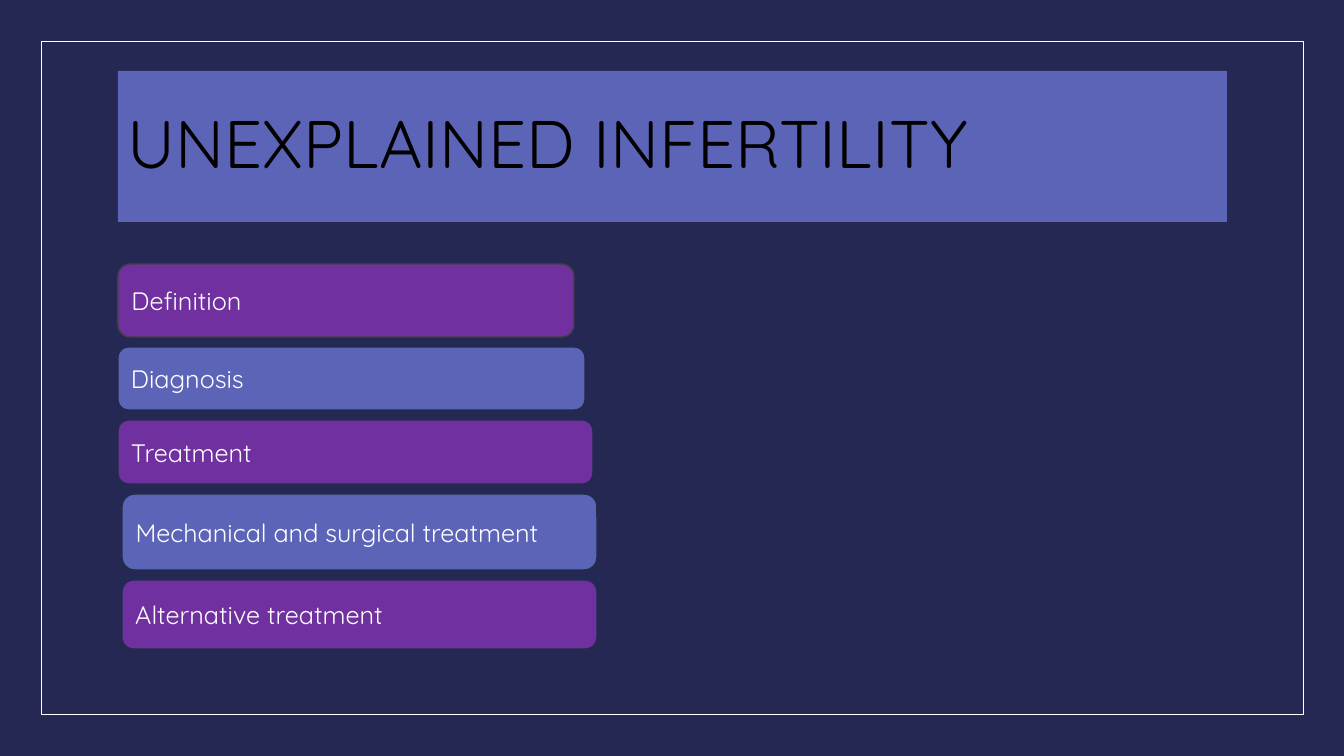
from pptx import Presentation
from pptx.dml.color import RGBColor
from pptx.enum.shapes import MSO_SHAPE as Shape
from pptx.enum.text import MSO_ANCHOR as Anchor, PP_ALIGN as Align
from pptx.util import Emu, Pt

NAVY, BLUE, PURPLE = "242852", "5C64B7", "7030A0"
EDGE, GREY, WHITE, BLACK = "202D4B", "453F46", "FFFFFF", "000000"


def px(n):
    return Emu(round(n * 914400 / 100.8))


def color(value):
    return RGBColor.from_string(value)


def write(tf, text, *, size, fill, font, spacing=1.0):
    tf.word_wrap = True
    tf.vertical_anchor = Anchor.MIDDLE
    p = tf.paragraphs[0]
    p.alignment = Align.LEFT
    p.line_spacing = spacing
    r = p.add_run()
    r.text = text
    r.font.size = Pt(size)
    r.font.name = font
    r.font.color.rgb = color(fill)


class Deck:
    font = "Quicksand"

    def __init__(self, width, height):
        self.prs = Presentation()
        self.prs.slide_width, self.prs.slide_height = px(width), px(height)
        self.s = None

    def slide(self, background):
        self.s = self.prs.slides.add_slide(self.prs.slide_layouts[6])
        self.s.background.fill.solid()
        self.s.background.fill.fore_color.rgb = color(background)

    def shape(self, kind, x, y, w, h, fill=None, line=None, weight=1):
        sp = self.s.shapes.add_shape(kind, px(x), px(y), px(w), px(h))
        sp.shadow.inherit = False
        if fill:
            sp.fill.solid()
            sp.fill.fore_color.rgb = color(fill)
        else:
            sp.fill.background()
        if line:
            sp.line.color.rgb = color(line)
            sp.line.width = Pt(weight)
        else:
            sp.line.fill.background()
        return sp

    def frame(self, x, y, w, h):
        self.shape(Shape.RECTANGLE, x, y, w, h, line=WHITE, weight=0.5)

    def title(self, text, x, y, w, h):
        sp = self.shape(Shape.RECTANGLE, x, y, w, h, fill=BLUE)
        write(sp.text_frame, text, size=48, fill=BLACK, font=self.font, spacing=0.9)

    def bar(self, text, x, y, w, h, fill, line):
        sp = self.shape(Shape.ROUNDED_RECTANGLE, x, y, w, h, fill, line)
        write(sp.text_frame, text, size=18, fill=WHITE, font=self.font)


def main():
    deck = Deck(1344, 756)
    deck.slide(NAVY)
    deck.frame(41, 41, 1262, 673)
    deck.title("UNEXPLAINED INFERTILITY", 118, 71, 1109, 151)
    topics = [
        ("Definition", 118, 456, 73, GREY),
        ("Diagnosis", 118, 467, 63, EDGE),
        ("Treatment", 118, 475, 64, EDGE),
        ("Mechanical and surgical treatment", 122, 475, 76, EDGE),
        ("Alternative treatment", 122, 475, 69, EDGE),
    ]
    y, gap = 264, 10
    for i, (text, x, w, h, line) in enumerate(topics):
        deck.bar(text, x, y, w, h, BLUE if i % 2 else PURPLE, line)
        y += h + gap
    deck.prs.save("out.pptx")


if __name__ == "__main__":
    main()
